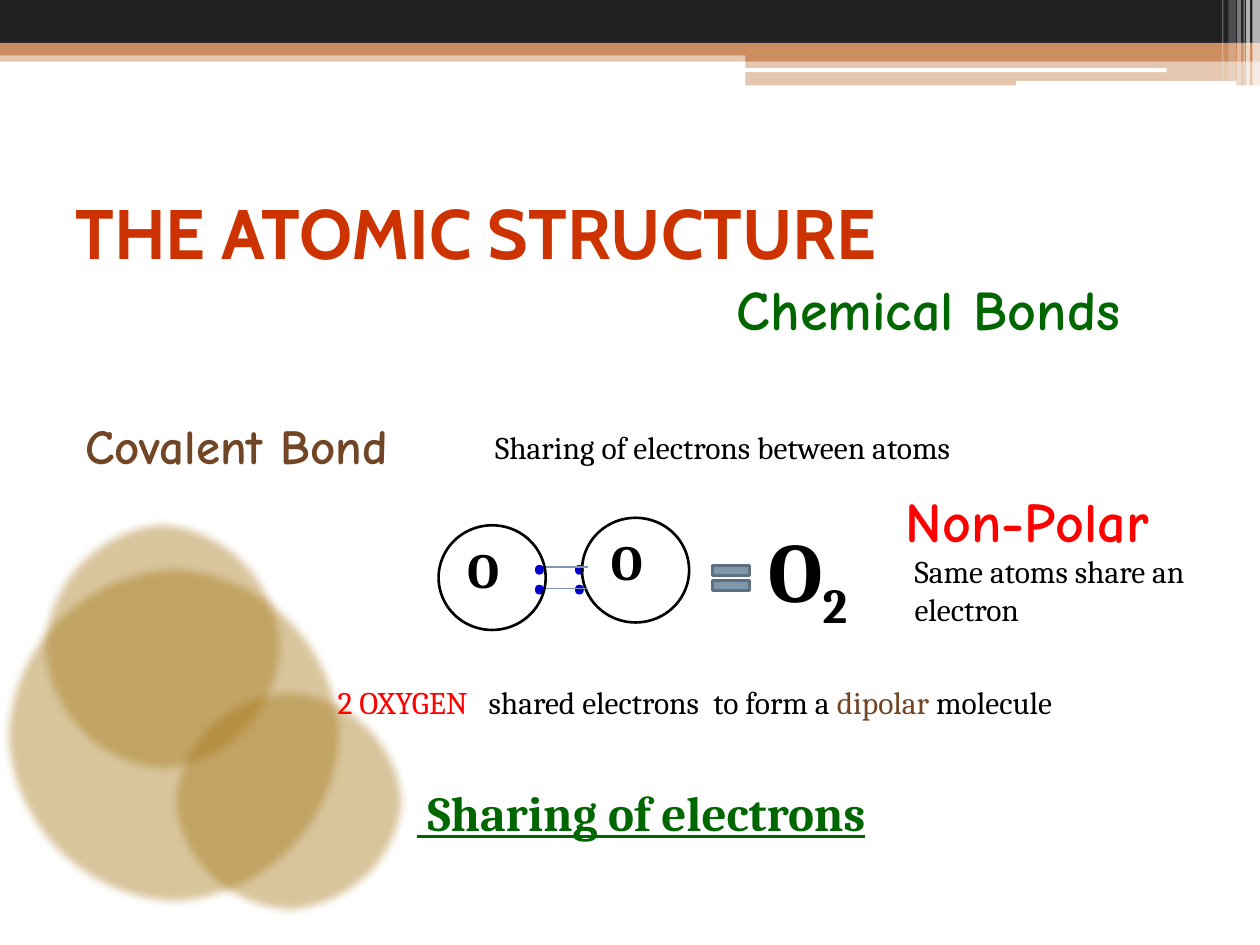
from dataclasses import dataclass

from pptx import Presentation
from pptx.dml.color import RGBColor
from pptx.enum.shapes import MSO_CONNECTOR, MSO_SHAPE
from pptx.enum.text import MSO_ANCHOR
from pptx.oxml.ns import qn
from pptx.util import Pt
from lxml import etree

RECT = MSO_SHAPE.RECTANGLE
ROUNDED = MSO_SHAPE.ROUNDED_RECTANGLE
OVAL = MSO_SHAPE.OVAL
EQUAL = MSO_SHAPE.MATH_EQUAL
STRAIGHT = MSO_CONNECTOR.STRAIGHT
TOP, MIDDLE = MSO_ANCHOR.TOP, MSO_ANCHOR.MIDDLE


@dataclass(frozen=True)
class Theme:
    serif: str = "Cambria"
    sans: str = "Cabin"
    comic: str = "Comic Neue"
    black: str = "000000"
    white: str = "FFFFFF"
    dark: str = "1F2123"
    orange: str = "CC8E60"
    gold: str = "A57617"
    rust: str = "CC3300"
    green: str = "006600"
    brown: str = "724524"
    red: str = "FF0000"
    blue: str = "0000CC"
    steel: str = "7E97AD"
    steel_dark: str = "5D7080"
    body: int = 18
    label: int = 28
    heading: int = 32
    electron: int = 36
    title: int = 40
    formula: int = 48


def rgb(color):
    return RGBColor.from_string(color)


def add_run(p, text, font, size, color, bold=False, underline=False, baseline=0):
    r = p.add_run()
    r.text = text
    f = r.font
    f.name, f.size, f.bold, f.underline = font, Pt(size), bold, underline
    f.color.rgb = rgb(color)
    if baseline:
        r._r.get_or_add_rPr().set("baseline", str(baseline * 1000))


class Canvas:
    def __init__(self, slide, theme):
        self.slide = slide
        self.theme = theme

    def shape(self, kind, x, y, w, h, fill=None, alpha=100, line=None,
              line_width=1.5, soft_edge=0):
        sp = self.slide.shapes.add_shape(kind, Pt(x), Pt(y), Pt(w), Pt(h))
        sp.shadow.inherit = False
        if fill:
            sp.fill.solid()
            sp.fill.fore_color.rgb = rgb(fill)
            if alpha < 100:
                clr = sp._element.spPr.find(qn("a:solidFill"))[0]
                etree.SubElement(clr, qn("a:alpha")).set("val", str(alpha * 1000))
        else:
            sp.fill.background()
        if line:
            sp.line.color.rgb = rgb(line)
            sp.line.width = Pt(line_width)
        else:
            sp.line.fill.background()
        if soft_edge:
            effects = sp._element.spPr.find(qn("a:effectLst"))
            etree.SubElement(effects, qn("a:softEdge")).set("rad", str(Pt(soft_edge)))
        return sp

    def text(self, x, y, w, h, runs, anchor=TOP, tabs=(), **style):
        """Add a text box; runs is a string or a list of (text, overrides)."""
        tf = self.slide.shapes.add_textbox(Pt(x), Pt(y), Pt(w), Pt(h)).text_frame
        tf.word_wrap = True
        tf.vertical_anchor = anchor
        p = tf.paragraphs[0]
        base = dict(font=self.theme.serif, size=self.theme.body,
                    color=self.theme.black) | style
        for text, extra in [(runs, {})] if isinstance(runs, str) else runs:
            add_run(p, text, **(base | extra))
        if tabs:
            stops = etree.SubElement(p._p.get_or_add_pPr(), qn("a:tabLst"))
            for pos in tabs:
                etree.SubElement(stops, qn("a:tab"), pos=str(Pt(pos)), algn="l")

    def line(self, x1, y1, x2, y2, color, width=0.75):
        cx = self.slide.shapes.add_connector(STRAIGHT, Pt(x1), Pt(y1), Pt(x2), Pt(y2))
        cx.line.color.rgb = rgb(color)
        cx.line.width = Pt(width)
        etree.SubElement(cx._element.spPr, qn("a:effectLst"))

    def atom(self, x, y, symbol):
        self.shape(OVAL, x, y, 61.2, 59.8, line=self.theme.black)
        self.text(x + 9.4, y + 4.3, 37.4, 41, symbol, size=self.theme.label, bold=True)

    def electron_pair(self, x, y):
        self.text(x, y, 37.4, 51, " :", size=self.theme.electron,
                  color=self.theme.blue, bold=True)


def draw_header(c):
    t = c.theme
    for x, y, w, h, fill, alpha in [
        (0, 28.8, 720, 6.5, t.orange, 50),
        (0, 0, 720, 24.5, t.dark, 100),
        (0, 24.5, 720, 7.2, t.orange, 100),
        (426, 28.1, 294, 7, t.orange, 100),
        (426, 34.6, 294, 14.2, t.orange, 50),
    ]:
        c.shape(RECT, x, y, w, h, fill, alpha)
    for x, y, w, h in [(425.5, 39, 241.2, 2.2), (580.5, 46.2, 126, 2.8)]:
        c.shape(ROUNDED, x, y, w, h, t.white)
    for x, w, h, alpha in [
        (715.7, 4.3, 49, 65), (712.1, 2.2, 49, 65), (710.6, 0.7, 49, 60),
        (707, 2.2, 49, 40), (702, 4.3, 46, 20), (698.4, 0.7, 46, 30),
    ]:
        c.shape(RECT, x, 0, w, h, t.white, alpha)


def draw_molecule(c):
    t = c.theme
    c.electron_pair(311, 300.2)
    c.atom(332.6, 295.9, "O")
    for y in (324, 336.2):
        c.line(308.9, y, 336.2, y, t.steel)
    c.electron_pair(288, 300.2)
    c.atom(250.6, 300.2, "O")
    c.shape(EQUAL, 403.2, 318.2, 28.8, 24.5, t.steel, line=t.steel_dark)
    c.text(432, 293, 74.2, 65.5, [("O", {}), ("2", {"baseline": -25})],
           size=t.formula, bold=True)


def draw_texts(c):
    t = c.theme
    c.text(36, 90, 648, 84.2, "THE ATOMIC STRUCTURE", anchor=MIDDLE,
           font=t.sans, size=t.title, color=t.rust, bold=True)
    c.text(414, 153.4, 298, 46, "Chemical Bonds",
           font=t.comic, size=t.heading, color=t.green, bold=True)
    c.text(41.8, 234, 244, 41, "Covalent Bond",
           font=t.comic, size=t.label, color=t.brown, bold=True)
    c.text(275.8, 241.2, 372.2, 29, "Sharing of electrons between atoms")
    c.text(510.5, 274.3, 209.5, 46, "Non-Polar",
           font=t.comic, size=t.heading, color=t.red, bold=True)
    c.text(515.5, 311.8, 186.5, 51, "Same atoms share an electron")
    c.text(185.8, 386.6, 472.3, 29, [
        ("2 OXYGEN", {"color": t.red}),
        ("\tshared electrons\tto form a ", {}),
        ("dipolar", {"color": t.brown}),
        (" molecule", {}),
    ], tabs=(86.3, 214.8))
    c.text(231.1, 443.5, 314.6, 41, " Sharing of electrons",
           size=t.label, color=t.green, bold=True, underline=True)


def main():
    prs = Presentation()
    prs.slide_width, prs.slide_height = Pt(720), Pt(540)
    c = Canvas(prs.slides.add_slide(prs.slide_layouts[6]), Theme())
    draw_header(c)
    for x, y, w, h in [(0, 321.1, 198, 198), (95.8, 391, 138.2, 133.2),
                       (20.9, 295.2, 144, 148.3)]:
        c.shape(OVAL, x, y, w, h, c.theme.gold, alpha=42, soft_edge=5)
    draw_molecule(c)
    draw_texts(c)
    prs.save("out.pptx")


if __name__ == "__main__":
    main()
